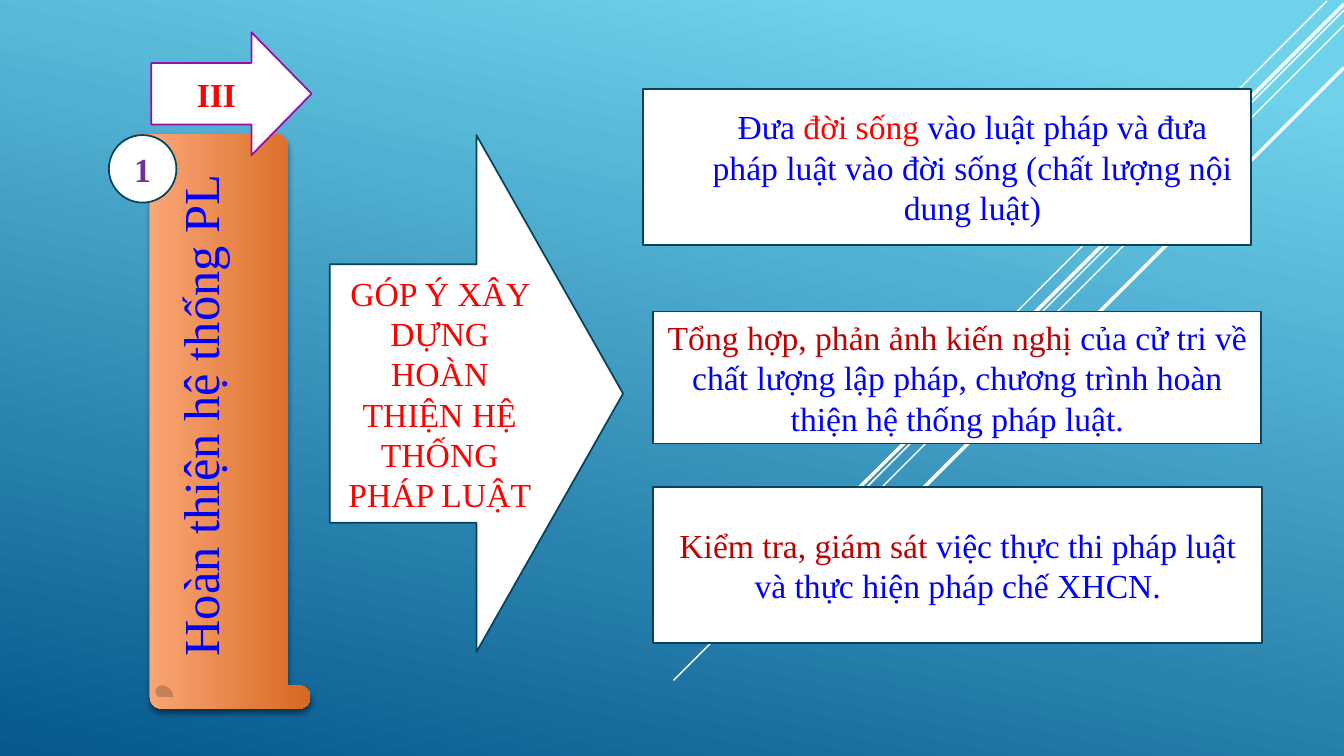
import pptx
import pptx.dml.color
import pptx.enum.shapes
import pptx.enum.text
import pptx.oxml
import pptx.oxml.ns
import pptx.util

PX = 9144  # 100 px to the inch
SHAPE = pptx.enum.shapes.MSO_SHAPE

THEME = {
    "white": "FFFFFF", "edge": "054361", "purple_edge": "990EA5",
    "blue": "0000FF", "red": "FF0000", "dark_red": "C00000", "violet": "7030A0",
    "sky": [(0.1, "6ED2EB"), (1, "06588E")],
    "scroll": [(0, "FFAE82"), (1, "D7681F")],
    "font": "Times New Roman", "body": 24, "title": 36,
}


def rgb(name):
    return pptx.dml.color.RGBColor.from_string(THEME[name])


def paint_gradient(fill, stops, clockwise_angle):
    fill.gradient()
    fill.gradient_angle = 360 - clockwise_angle
    for stop, (position, colour) in zip(fill.gradient_stops, stops):
        stop.position = position
        stop.color.rgb = pptx.dml.color.RGBColor.from_string(colour)


deck = pptx.Presentation()
deck.slide_width, deck.slide_height = 1333 * PX, 750 * PX
slide = deck.slides.add_slide(deck.slide_layouts[6])
paint_gradient(slide.background.fill, THEME["sky"], 102)

# Diagonal rays: start x, start y, end x, end y, weight
rays = [
    (1316, 1, 900, 418, 1),
    (1333, 10, 668, 675, 1),
    (1333, 25, 791, 567, 1),
    (1333, 4, 802, 534, 2.5),
    (1333, 67, 858, 542, 2.5),
]
for *ends, weight in rays:
    ray = slide.shapes.add_connector(
        pptx.enum.shapes.MSO_CONNECTOR.STRAIGHT, *(end * PX for end in ends))
    ray.line.color.rgb = rgb("white")
    ray.line.width = pptx.util.Pt(weight)
    ray._element.spPr.append(pptx.oxml.parse_xml(
        f'<a:effectLst {pptx.oxml.ns.nsdecls("a")}/>'))

# Back to front: preset, box in px, edge colour, text runs, font format
plain = {"size": pptx.util.Pt(THEME["body"]), "name": THEME["font"], "bold": False}
bold = {**plain, "bold": True}
title = {**plain, "size": pptx.util.Pt(THEME["title"])}
parts = {
    "scroll": (SHAPE.HORIZONTAL_SCROLL, (-68, 327, 570, 182), None,
               [("Hoàn thiện hệ thống PL", "blue")], title),
    "section": (SHAPE.RIGHT_ARROW, (150, 32, 159, 122), "purple_edge",
                [("III", "red")], bold),
    "law and life": (SHAPE.RECTANGLE, (638, 88, 603, 155), "edge",
                     [("Đưa ", "blue"), ("đời sống ", "red"),
                      ("vào luật pháp và đưa pháp luật vào đời sống "
                       "(chất lượng nội dung luật)", "blue")], plain),
    "petitions": (SHAPE.RECTANGLE, (648, 309, 603, 131), "edge",
                  [("Tổng hợp, phản ảnh kiến nghị ", "dark_red"),
                   ("của cử tri về chất lượng lập pháp, chương trình hoàn "
                    "thiện hệ thống pháp luật.", "blue")], plain),
    "oversight": (SHAPE.RECTANGLE, (648, 483, 604, 155), "edge",
                  [("Kiểm tra, giám sát ", "dark_red"),
                   ("việc thực thi pháp luật và thực hiện pháp chế XHCN.",
                    "blue")], plain),
    "contribution": (SHAPE.RIGHT_ARROW, (327, 134, 291, 513), "edge",
                     [("GÓP Ý XÂY DỰNG HOÀN THIỆN HỆ THỐNG PHÁP LUẬT", "red")],
                     plain),
    "number": (SHAPE.OVAL, (108, 134, 67, 67), "edge", [("1", "violet")], bold),
}
drawn = {}
for part, (preset, box, edge, runs, font_format) in parts.items():
    shape = slide.shapes.add_shape(preset, *(length * PX for length in box))
    drawn[part] = shape
    shape.shadow.inherit = False
    if edge:
        shape.fill.solid()
        shape.fill.fore_color.rgb = rgb("white")
        shape.line.color.rgb = rgb(edge)
        shape.line.width = pptx.util.Pt(1.25)
    else:
        shape.line.fill.background()
    frame = shape.text_frame
    frame.word_wrap = True
    frame.vertical_anchor = pptx.enum.text.MSO_ANCHOR.MIDDLE
    paragraph = frame.paragraphs[0]
    paragraph.alignment = pptx.enum.text.PP_ALIGN.CENTER
    for text, colour in runs:
        run = paragraph.add_run()
        run.text = text
        run.font.color.rgb = rgb(colour)
        for attribute, value in font_format.items():
            setattr(run.font, attribute, value)

drawn["section"].adjustments[1] = 0.489

indented = drawn["law and life"].text_frame.paragraphs[0]
indented.level = 1
indented._p.get_or_add_pPr().set("marL", str(50 * PX))

scroll = drawn["scroll"]
scroll.rotation = 270
scroll.text_frame.margin_bottom = 43 * PX
paint_gradient(scroll.fill, THEME["scroll"], 90)
scroll._element.spPr.find(pptx.oxml.ns.qn("a:effectLst")).append(pptx.oxml.parse_xml(
    f'<a:outerShdw {pptx.oxml.ns.nsdecls("a")} blurRad="50800" dist="38100" '
    'dir="5400000" rotWithShape="0"><a:srgbClr val="000000">'
    '<a:alpha val="46000"/></a:srgbClr></a:outerShdw>'))

deck.save("out.pptx")
